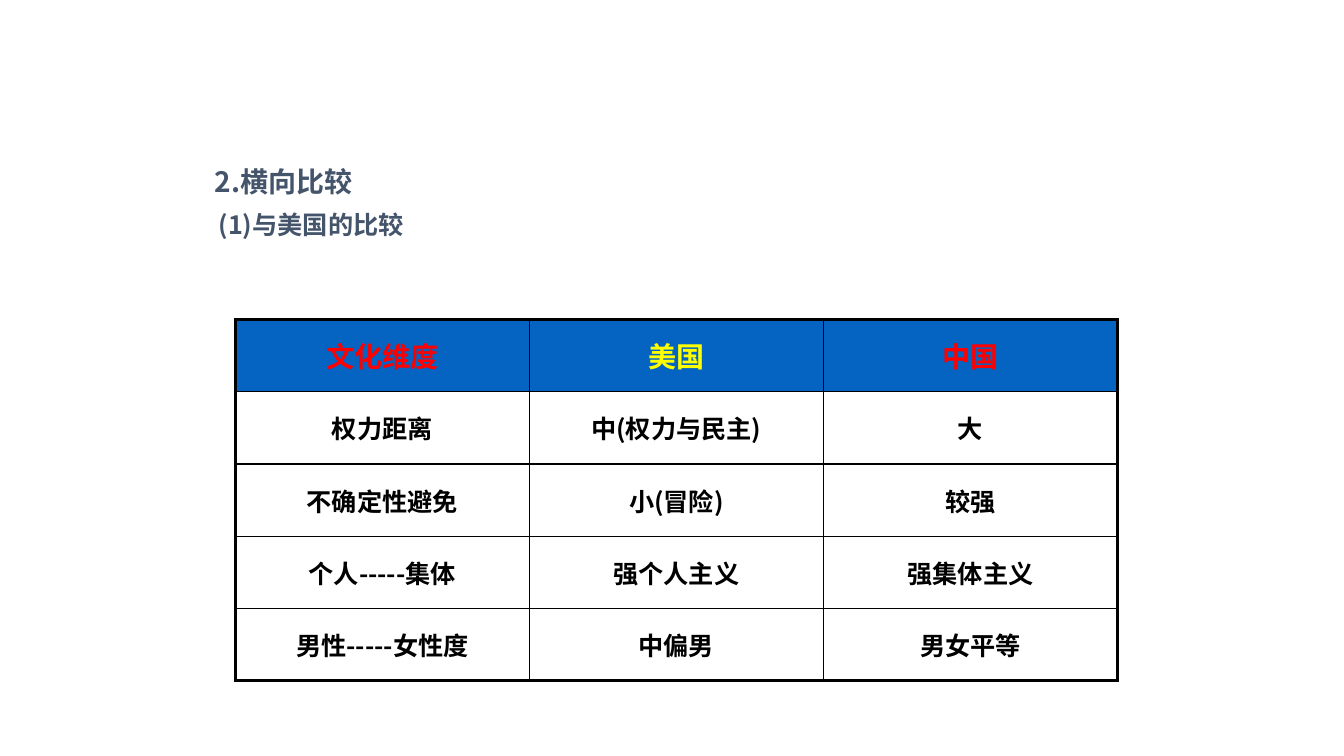
"""Build the slide comparing cultural dimensions of two countries."""
from dataclasses import dataclass

import pptx
import pptx.dml.color
import pptx.enum.text
import pptx.oxml
import pptx.oxml.ns
import pptx.util
from pptx.util import Cm


@dataclass(frozen=True)
class Theme:
    """Colours, fonts and sizes."""
    font: str = "Noto Sans CJK SC"
    header_font: str = "Arial"
    title: str = "44546A"
    header_fill: str = "0563C1"
    body_fill: str = "FFFFFF"
    red: str = "FF0000"
    yellow: str = "FFFF00"
    ink: str = "000000"
    large: int = 20
    normal: int = 18
    thick: float = 2.25
    thin: float = 1


@dataclass(frozen=True)
class Style:
    """Look of one paragraph."""
    size: int
    color: str
    font: str


@dataclass(frozen=True)
class Heading:
    """One heading line and its indent."""
    text: str
    style: Style
    indent: float


T = Theme()
HEADINGS = (
    Heading("2.横向比较", Style(T.large, T.title, T.font), 0.28),
    Heading("(1)与美国的比较", Style(T.normal, T.title, T.font), 0.38),
)
HEADER_COLORS = (T.red, T.yellow, T.red)
ROWS = (
    ("文化维度", "美国", "中国"),
    ("权力距离", "中(权力与民主)", "大"),
    ("不确定性避免", "小(冒险)", "较强"),
    ("个人-----集体", "强个人主义", "强集体主义"),
    ("男性-----女性度", "中偏男", "男女平等"),
)


def rgb(color: str) -> pptx.dml.color.RGBColor:
    """Return the colour for a hex string."""
    return pptx.dml.color.RGBColor.from_string(color)


def write(p, text: str, style: Style) -> None:
    """Put bold styled text into a paragraph."""
    p.add_run().text = text
    f = p.font
    f.name, f.size, f.bold = style.font, pptx.util.Pt(style.size), True
    f.color.rgb = rgb(style.color)
    ea = pptx.oxml.parse_xml(
        f'<a:ea {pptx.oxml.ns.nsdecls("a")} typeface="{T.font}"/>')
    p._p.pPr.find(pptx.oxml.ns.qn("a:defRPr")).append(ea)


def add_border(cell, side: str, width: float) -> None:
    """Draw one solid cell edge."""
    cell._tc.get_or_add_tcPr().append(pptx.oxml.parse_xml(
        f'<a:ln{side} {pptx.oxml.ns.nsdecls("a")} w="{pptx.util.Pt(width)}">'
        f'<a:solidFill><a:srgbClr val="{T.ink}"/></a:solidFill></a:ln{side}>'))


def add_headings(s) -> None:
    """Add the two heading lines."""
    tf = s.shapes.add_textbox(Cm(4.88), Cm(4.11), Cm(24.23), Cm(2.5)).text_frame
    tf.word_wrap = True
    for i, heading in enumerate(HEADINGS):
        p = tf.add_paragraph() if i else tf.paragraphs[0]
        p.line_spacing = 0.9
        p.space_before = pptx.util.Pt(10)
        write(p, heading.text, heading.style)
        p._p.pPr.set("marL", str(Cm(heading.indent)))


def add_comparison(s) -> None:
    """Add the comparison table."""
    n_rows, n_cols = len(ROWS), len(ROWS[0])
    frame = s.shapes.add_table(
        n_rows, n_cols, Cm(5.93), Cm(8.05), Cm(22.23), Cm(9.1))
    for r, row in enumerate(ROWS):
        for c, text in enumerate(row):
            cell = frame.table.cell(r, c)
            cell.vertical_anchor = pptx.enum.text.MSO_ANCHOR.MIDDLE
            outer = {"L": c == 0, "R": c == n_cols - 1,
                     "T": r == 0, "B": r == n_rows - 1}
            for side, is_outer in outer.items():
                add_border(cell, side, T.thick if is_outer else T.thin)
            cell.fill.solid()
            cell.fill.fore_color.rgb = rgb(T.body_fill if r else T.header_fill)
            style = (Style(T.normal, T.ink, T.font) if r else
                     Style(T.large, HEADER_COLORS[c], T.header_font))
            p = cell.text_frame.paragraphs[0]
            p.alignment = pptx.enum.text.PP_ALIGN.CENTER
            p.space_before = pptx.util.Pt(0.2 * style.size)
            write(p, text, style)


def main() -> None:
    """Build and save the presentation."""
    prs = pptx.Presentation()
    prs.slide_width, prs.slide_height = Cm(33.87), Cm(19.05)
    s = prs.slides.add_slide(prs.slide_layouts[6])
    add_headings(s)
    add_comparison(s)
    prs.save("out.pptx")


if __name__ == "__main__":
    main()
